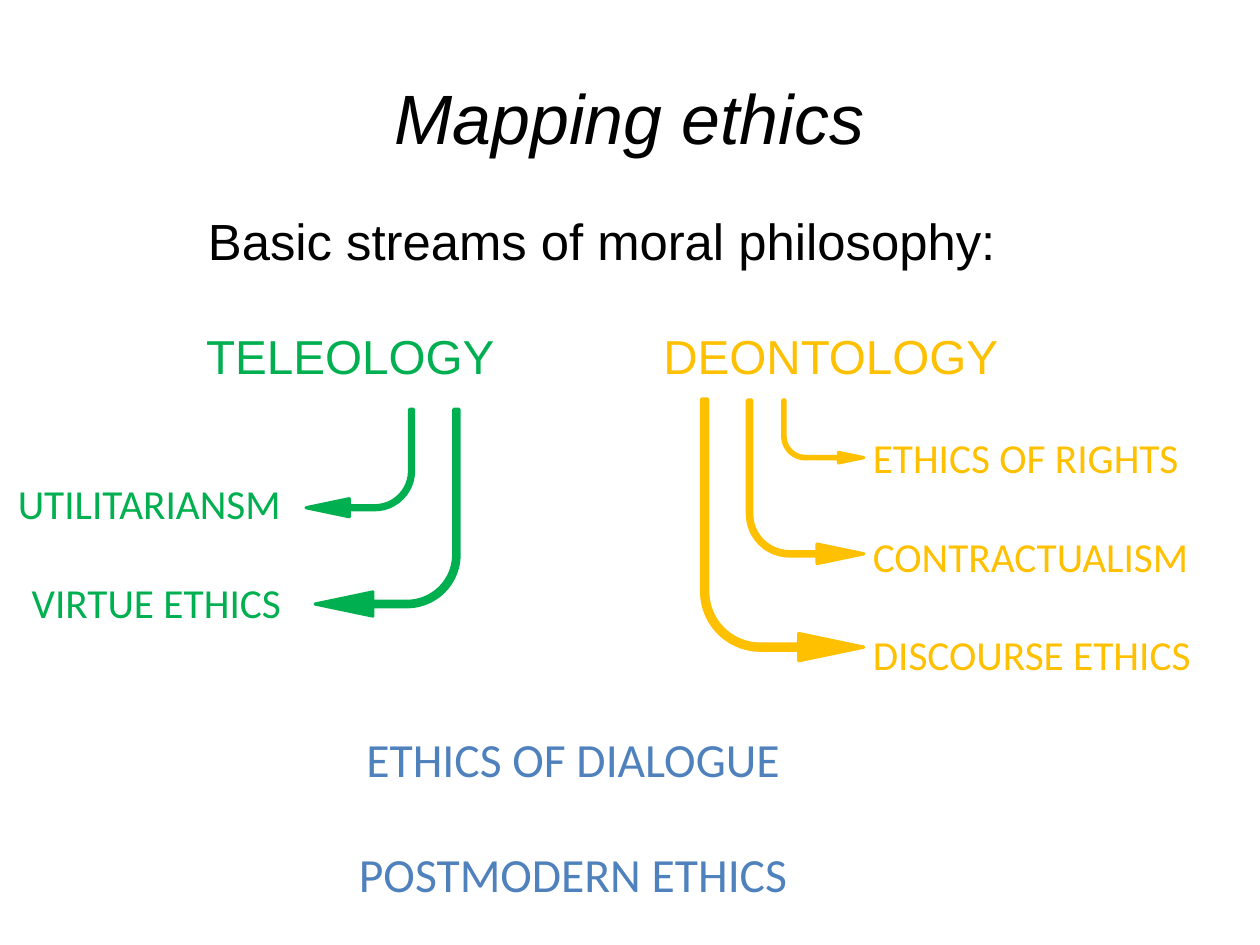
"""Build a slide that maps the basic streams of moral philosophy."""
from dataclasses import dataclass

from pptx import Presentation
from pptx.dml.color import RGBColor
from pptx.enum.shapes import MSO_SHAPE
from pptx.enum.text import MSO_ANCHOR, MSO_AUTO_SIZE, PP_ALIGN
from pptx.util import Pt

BENT_ARROW = MSO_SHAPE.BENT_ARROW
MIDDLE, TOP = MSO_ANCHOR.MIDDLE, MSO_ANCHOR.TOP
NO_AUTOFIT = MSO_AUTO_SIZE.NONE
LEFT, CENTER, RIGHT = PP_ALIGN.LEFT, PP_ALIGN.CENTER, PP_ALIGN.RIGHT

COLORS = {
    "text": "000000",
    "teleology": "00B050",
    "deontology": "FFC000",
    "other": "4F81BD",
}
ARROW_PROPORTIONS = (0.038, 0.084, 0.401, 0.362)
TAB_DISTANCE = 72


@dataclass
class Area:
    left: float
    top: float
    width: float
    height: float

    def lengths(self) -> tuple:
        return Pt(self.left), Pt(self.top), Pt(self.width), Pt(self.height)


@dataclass
class Stream:
    lines: tuple
    area: Area
    align: int
    size: float
    gap: float
    color: str


@dataclass
class Arrow:
    area: Area
    color: str
    points_right: bool


STREAMS = (
    Stream(("UTILITARIANSM", "VIRTUE ETHICS"),
           Area(2.9, 297.7, 181.4, 101.5), RIGHT, 26, 31, "teleology"),
    Stream(("ETHICS OF RIGHTS", "CONTRACTUALISM", "DISCOURSE ETHICS"),
           Area(542.7, 268.6, 216.7, 164.9), LEFT, 26, 31, "deontology"),
    Stream(("ETHICS OF DIALOGUE", "POSTMODERN ETHICS"),
           Area(217.4, 456.2, 287.3, 116.6), CENTER, 30, 36.2, "other"),
)
ARROWS = (
    Arrow(Area(198.5, 257.8, 90.7, 130.3), "teleology", False),
    Arrow(Area(192.8, 257.8, 67.7, 67.7), "teleology", False),
    Arrow(Area(493, 252, 51.1, 39.6), "deontology", True),
    Arrow(Area(470.7, 252, 73.4, 103), "deontology", True),
    Arrow(Area(441.9, 251.3, 102.2, 164.9), "deontology", True),
)


def rgb(name: str) -> RGBColor:
    return RGBColor.from_string(COLORS[name])


def add_span(para, text: str, *, size: float, color: str = "text",
             name: str = "Arial", italic: bool = False) -> None:
    span = para.add_run()
    span.text = text
    span.font.name = name
    span.font.size = Pt(size)
    span.font.italic = italic
    span.font.color.rgb = rgb(color)


def next_para(frame, index: int, align: int, gap: float = 0):
    para = frame.add_paragraph() if index else frame.paragraphs[0]
    para.alignment = align
    para.space_before = Pt(0)
    para.space_after = Pt(gap)
    return para


def prepare_placeholder(box, area: Area):
    box.left, box.top, box.width, box.height = area.lengths()
    frame = box.text_frame
    frame.auto_size = NO_AUTOFIT
    frame.vertical_anchor = MIDDLE
    frame.margin_left = frame.margin_right = Pt(0)
    frame.margin_top = frame.margin_bottom = Pt(0)
    return frame


def fill_headings(page) -> None:
    title = prepare_placeholder(page.shapes.title, Area(39.6, 23.8, 714.2, 99.4))
    add_span(next_para(title, 0, CENTER), "Mapping ethics", size=44, italic=True)
    body = prepare_placeholder(page.placeholders[1], Area(22.3, 121.7, 714.2, 130.3))
    add_span(next_para(body, 0, CENTER, 35.3),
             "Basic streams of moral philosophy:", size=32)
    branches = next_para(body, 1, CENTER, 14.2)
    branches._p.get_or_add_pPr().set("defTabSz", str(Pt(TAB_DISTANCE)))
    add_span(branches, "TELEOLOGY\t\t", size=30, color="teleology")
    add_span(branches, "DEONTOLOGY", size=30, color="deontology")


def add_stream(page, stream: Stream) -> None:
    frame = page.shapes.add_textbox(*stream.area.lengths()).text_frame
    frame.word_wrap = False
    frame.auto_size = NO_AUTOFIT
    frame.vertical_anchor = TOP
    last = len(stream.lines) - 1
    for index, line in enumerate(stream.lines):
        gap = stream.gap if index < last else 0
        para = next_para(frame, index, stream.align, gap)
        add_span(para, line, size=stream.size, color=stream.color, name="Calibri")


def add_arrow(page, arrow: Arrow) -> None:
    shape = page.shapes.add_shape(BENT_ARROW, *arrow.area.lengths())
    for index, proportion in enumerate(ARROW_PROPORTIONS):
        shape.adjustments[index] = proportion
    shape.rotation = 180
    if arrow.points_right:
        shape._element.spPr.get_or_add_xfrm().set("flipH", "1")
    shape.shadow.inherit = False
    shape.fill.solid()
    shape.fill.fore_color.rgb = rgb(arrow.color)
    shape.line.color.rgb = rgb(arrow.color)
    shape.line.width = Pt(2)


def main() -> None:
    deck = Presentation()
    deck.slide_width, deck.slide_height = Pt(793.7), Pt(595.28)
    page = deck.slides.add_slide(deck.slide_layouts[0])
    fill_headings(page)
    for stream in STREAMS:
        add_stream(page, stream)
    for arrow in ARROWS:
        add_arrow(page, arrow)
    deck.save("out.pptx")


if __name__ == "__main__":
    main()
